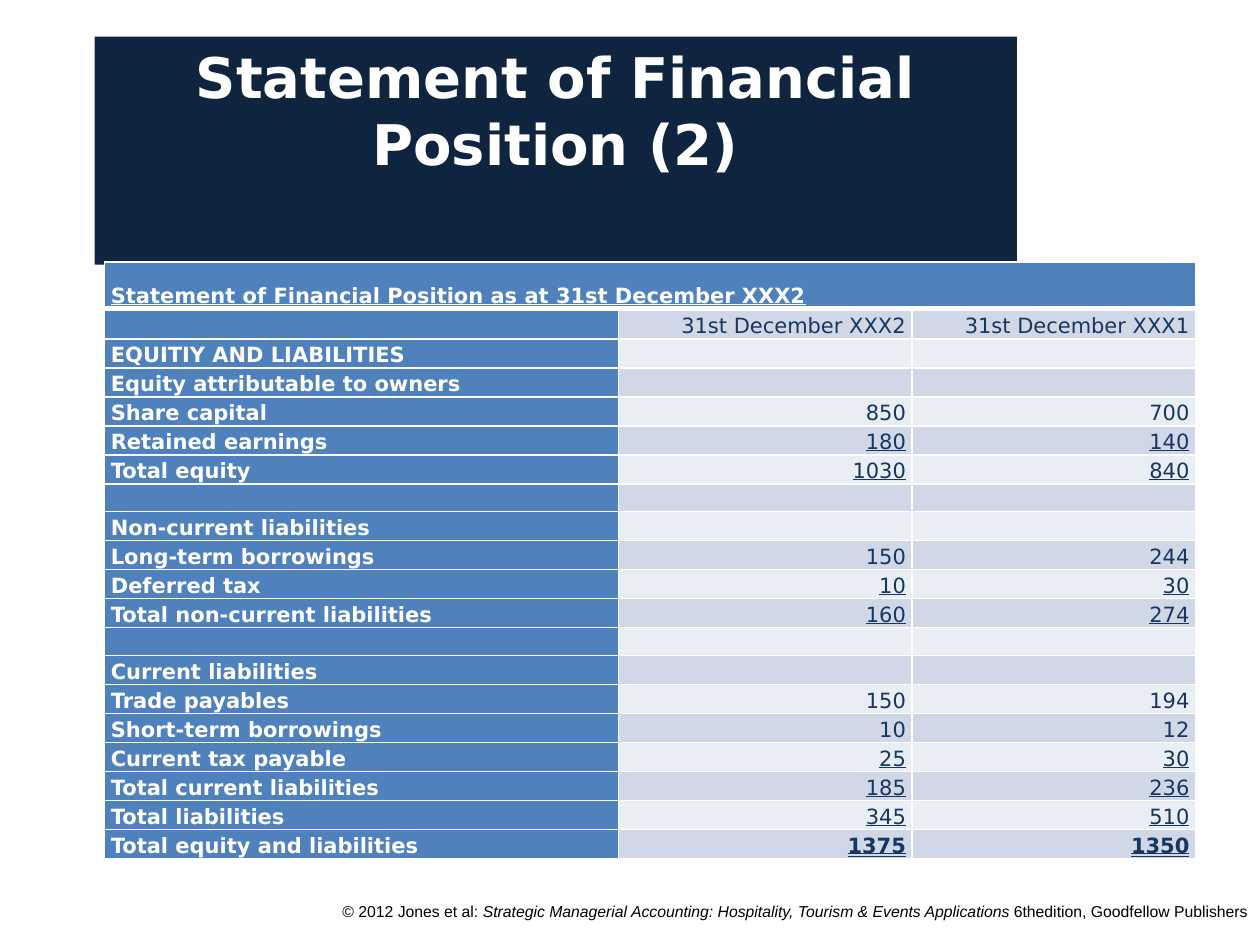
from lxml.etree import SubElement
from pptx import Presentation
from pptx.dml.color import RGBColor
from pptx.enum.shapes import MSO_SHAPE as Shape
from pptx.enum.text import MSO_ANCHOR as Anchor, MSO_UNDERLINE as Underline, PP_ALIGN as Align
from pptx.oxml import parse_xml
from pptx.oxml.ns import nsdecls, qn
from pptx.util import Inches, Pt

WHITE = RGBColor(0xFF, 0xFF, 0xFF)
BLACK = RGBColor(0x00, 0x00, 0x00)
NAVY = RGBColor(0x0F, 0x24, 0x3E)
BLUE = RGBColor(0x4F, 0x81, 0xBD)
INK = RGBColor(0x17, 0x37, 0x5E)
DARK_BAND = RGBColor(0xD0, 0xD8, 0xE8)
LIGHT_BAND = RGBColor(0xE9, 0xED, 0xF4)

COLUMN_WIDTHS = (4.08, 2.33, 2.25)
HEADING_HEIGHTS = (0.37, 0.24)
ROW_HEIGHT = 0.22
HEADING = "Statement of Financial Position as at 31st December XXX2"
SINGLE, DOUBLE = Underline.SINGLE_LINE, Underline.DOUBLE_LINE

ROWS = [
    ("", "31st December XXX2", "31st December XXX1", None),
    ("EQUITIY AND LIABILITIES", "", "", None),
    ("Equity attributable to owners", "", "", None),
    ("Share capital", "850", "700", None),
    ("Retained earnings", "180", "140", SINGLE),
    ("Total equity", "1030", "840", SINGLE),
    ("", "", "", None),
    ("Non-current liabilities", "", "", None),
    ("Long-term borrowings", "150", "244", None),
    ("Deferred tax", "10", "30", SINGLE),
    ("Total non-current liabilities", "160", "274", SINGLE),
    ("", "", "", None),
    ("Current liabilities", "", "", None),
    ("Trade payables", "150", "194", None),
    ("Short-term borrowings", "10", "12", None),
    ("Current tax payable", "25", "30", SINGLE),
    ("Total current liabilities", "185", "236", SINGLE),
    ("Total liabilities", "345", "510", SINGLE),
    ("Total equity and liabilities", "1375", "1350", DOUBLE),
]


def set_attributes(target, values):
    for name, value in values.items():
        setattr(target, name, value)


def add_run(paragraph, text, color, **font_values):
    run = paragraph.add_run()
    run.text = text
    run.font.color.rgb = color
    set_attributes(run.font, font_values)


def add_title(slide, text):
    shape = slide.shapes.add_shape(
        Shape.RECTANGLE, Inches(0.75), Inches(0.29), Inches(7.32), Inches(1.81))
    shape.shadow.inherit = False
    shape.fill.solid()
    shape.fill.fore_color.rgb = NAVY
    shape.line.fill.background()
    set_attributes(shape.text_frame, {"word_wrap": True, "vertical_anchor": Anchor.TOP})
    paragraph = shape.text_frame.paragraphs[0]
    paragraph.alignment = Align.CENTER
    add_run(paragraph, text, WHITE, name="DejaVu Sans", size=Pt(32), bold=True)


def add_footer(slide, parts):
    box = slide.shapes.add_textbox(Inches(2.23), Inches(7.11), Inches(7.77), Inches(0.39))
    box.text_frame.word_wrap = True
    paragraph = box.text_frame.paragraphs[0]
    paragraph.alignment = Align.RIGHT
    for text, italic in parts:
        add_run(paragraph, text, BLACK, name="Arial", size=Pt(9), italic=italic)


def set_borders(cell, top=1, bottom=1):
    properties = cell._tc.get_or_add_tcPr()
    widths = {"lnL": 1, "lnR": 1, "lnT": top, "lnB": bottom}
    for position, (side, width) in enumerate(widths.items()):
        properties.insert(position, parse_xml(
            f'<a:{side} {nsdecls("a")} w="{Pt(width)}"><a:solidFill>'
            f'<a:srgbClr val="{WHITE}"/></a:solidFill></a:{side}>'))


def fill_cell(cell, text, fill, color, alignment, **font_values):
    set_attributes(cell, {
        "vertical_anchor": Anchor.BOTTOM,
        "margin_left": Inches(0.05), "margin_right": Inches(0.05),
        "margin_top": 0, "margin_bottom": 0})
    cell.fill.solid()
    cell.fill.fore_color.rgb = fill
    paragraph = cell.text_frame.paragraphs[0]
    set_attributes(paragraph, {"alignment": alignment, "line_spacing": 1.15})
    if text:
        add_run(paragraph, text, color, name="DejaVu Sans", size=Pt(12), **font_values)
    else:
        SubElement(paragraph._p, qn("a:endParaRPr"), sz="1200")


def add_statement(slide):
    heights = HEADING_HEIGHTS + (ROW_HEIGHT,) * (len(ROWS) - 1)
    table = slide.shapes.add_table(
        len(heights), len(COLUMN_WIDTHS), Inches(0.83), Inches(2.08),
        Inches(sum(COLUMN_WIDTHS)), Inches(sum(heights))).table
    for column, width in zip(table.columns, COLUMN_WIDTHS):
        column.width = Inches(width)
    for row, height in zip(table.rows, heights):
        row.height = Inches(height)

    table.cell(0, 0).merge(table.cell(0, len(COLUMN_WIDTHS) - 1))
    for column in range(len(COLUMN_WIDTHS)):
        fill_cell(table.cell(0, column), "" if column else HEADING, BLUE, WHITE,
                  Align.LEFT, bold=True, underline=SINGLE)
        set_borders(table.cell(0, column), bottom=3)

    for index, (label, *amounts, underline) in enumerate(ROWS, start=1):
        band = DARK_BAND if index % 2 else LIGHT_BAND
        fill_cell(table.cell(index, 0), label, BLUE, WHITE, Align.LEFT, bold=True)
        for column, amount in enumerate(amounts, start=1):
            fill_cell(table.cell(index, column), amount, band, INK, Align.RIGHT,
                      bold=underline == DOUBLE, underline=underline)
        for column in range(len(COLUMN_WIDTHS)):
            set_borders(table.cell(index, column), top=3 if index == 1 else 1)


def main():
    presentation = Presentation()
    presentation.slide_width, presentation.slide_height = Inches(10), Inches(7.5)
    slide = presentation.slides.add_slide(presentation.slide_layouts[6])
    add_footer(slide, [
        ("© 2012 Jones et al: ", False),
        ("Strategic Managerial Accounting: Hospitality, Tourism & Events Applications ", True),
        ("6thedition, Goodfellow Publishers", False)])
    add_title(slide, "Statement of Financial Position (2)")
    add_statement(slide)
    presentation.save("out.pptx")


if __name__ == "__main__":
    main()
